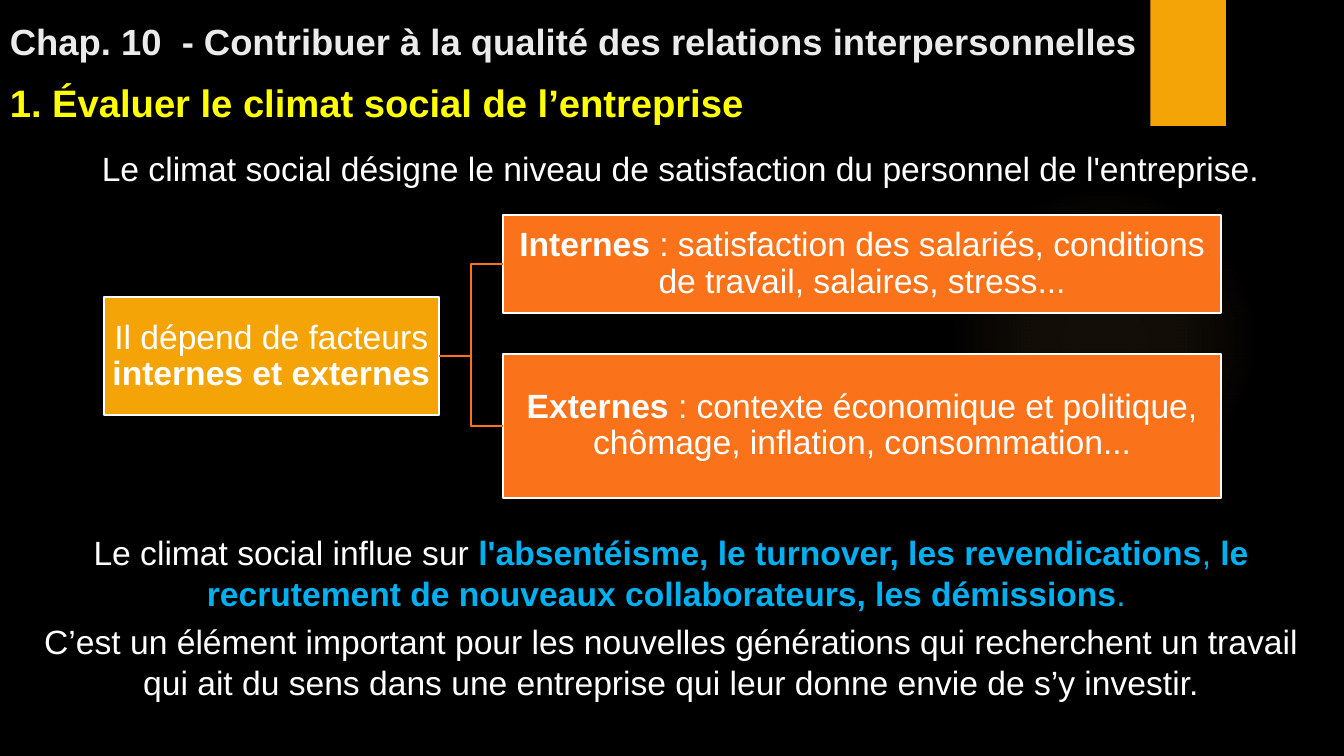
from lxml.etree import SubElement
from pptx import Presentation
from pptx.dml.color import RGBColor
from pptx.enum.shapes import MSO_CONNECTOR, MSO_SHAPE
from pptx.enum.text import MSO_ANCHOR, PP_ALIGN
from pptx.oxml import parse_xml
from pptx.oxml.ns import nsdecls, qn
from pptx.util import Inches, Pt

FONT = "Arial"
COLORS = {
    "black": "000000",
    "white": "FFFFFF",
    "title": "EBEBEB",
    "yellow": "FFFF00",
    "blue": "00B0F0",
    "amber": "F5A408",
    "orange": "FA731A",
    "glow": "FAC96A",
}


def rgb(name):
    return RGBColor.from_string(COLORS[name])


def write_text(s, paragraphs, size=24, color="white", bold=False, align=PP_ALIGN.CENTER,
               anchor=MSO_ANCHOR.TOP, inset=None, line_spacing=None, gap=0):
    """Each paragraph is a list of runs: (text, overrides of color and bold)."""
    tf = s.text_frame
    tf.word_wrap = True
    tf.vertical_anchor = anchor
    if inset is not None:
        tf.margin_left = tf.margin_right = tf.margin_top = tf.margin_bottom = Inches(inset)
    for i, runs in enumerate(paragraphs):
        p = tf.paragraphs[0] if i == 0 else tf.add_paragraph()
        p.alignment = align
        if line_spacing:
            p.line_spacing = line_spacing
        if i:
            p.space_before = Pt(gap)
        for text, style in runs:
            r = p.add_run()
            r.text = text
            r.font.name = FONT
            r.font.size = Pt(size)
            r.font.bold = style.get("bold", bold)
            r.font.color.rgb = rgb(style.get("color", color))


def add_text(slide, box, paragraphs, **style):
    s = slide.shapes.add_textbox(*map(Inches, box))
    write_text(s, paragraphs, **style)


def add_block(slide, box, fill, line=None, shape=MSO_SHAPE.RECTANGLE):
    s = slide.shapes.add_shape(shape, *map(Inches, box))
    s.shadow.inherit = False
    s.fill.solid()
    s.fill.fore_color.rgb = rgb(fill)
    if line:
        s.line.color.rgb = rgb(line)
        s.line.width = Pt(1.5)
    else:
        s.line.fill.background()
    return s


def add_factor(slide, box, fill, runs):
    s = add_block(slide, box, fill, line="white")
    write_text(s, [runs], anchor=MSO_ANCHOR.MIDDLE, inset=0.02, line_spacing=0.9)
    return s


def add_glow(slide, box):
    s = add_block(slide, box, "glow", shape=MSO_SHAPE.OVAL)
    stops = "".join(
        f'<a:gs pos="{pos * 1000}"><a:srgbClr val="{COLORS["glow"]}">'
        f'<a:alpha val="{alpha * 1000}"/></a:srgbClr></a:gs>'
        for pos, alpha in ((0, 7), (36, 6), (69, 0), (100, 0)))
    gradient = parse_xml(
        f'<a:gradFill {nsdecls("a")}><a:gsLst>{stops}</a:gsLst><a:path path="circle">'
        '<a:fillToRect l="50000" t="50000" r="50000" b="50000"/></a:path></a:gradFill>')
    solid = s.element.spPr.find(qn("a:solidFill"))
    s.element.spPr.replace(solid, gradient)


def join(slide, source, target):
    c = slide.shapes.add_connector(MSO_CONNECTOR.ELBOW, 0, 0, 0, 0)
    c.begin_connect(source, 3)
    c.end_connect(target, 1)
    c.line.color.rgb = rgb("orange")
    c.line.width = Pt(1.5)
    SubElement(c.element.spPr, qn("a:effectLst"))


def main():
    prs = Presentation()
    prs.slide_width, prs.slide_height = Inches(13.33), Inches(7.5)
    slide = prs.slides.add_slide(prs.slide_layouts[6])
    slide.background.fill.solid()
    slide.background.fill.fore_color.rgb = rgb("black")

    # Decoration
    add_glow(slide, (9.41, 1.83, 3.08, 3.08))
    add_block(slide, (11.41, 0, 0.75, 1.25), "amber")

    # Headings
    headings = (
        (0.08, 26, "title", "Chap. 10  - Contribuer à la qualité des relations interpersonnelles"),
        (0.7, 27.3, "yellow", "1. Évaluer le climat social de l’entreprise"),
    )
    for top, size, color, text in headings:
        add_text(slide, (0, top, 13.14, 0.59), [[(text, {})]], size=size, color=color,
                 bold=True, align=PP_ALIGN.LEFT, anchor=MSO_ANCHOR.BOTTOM)

    # Definition
    add_text(slide, (0.25, 1.42, 13.09, 0.5), [[(
        "Le climat social désigne le niveau de satisfaction du personnel de l'entreprise. ", {})]])

    # Factor tree
    strong = {"bold": True}
    root = add_factor(slide, (1.03, 2.95, 3.32, 1.17), "amber", [
        ("Il dépend de facteurs", {}), (" internes et externes", strong)])
    branches = (
        (2.13, 0.98, "Internes",
         "satisfaction des salariés, conditions de travail, salaires, stress..."),
        (3.51, 1.43, "Externes",
         "contexte économique et politique, chômage, inflation, consommation..."),
    )
    for top, height, name, examples in branches:
        branch = add_factor(slide, (4.99, top, 7.12, height), "orange", [
            (name, strong), (f" : {examples}", {})])
        join(slide, root, branch)

    # Consequences
    blue = {"color": "blue"}
    strong_blue = {"color": "blue", "bold": True}
    add_text(slide, (0.25, 5.23, 12.81, 1.8), [
        [("Le climat social influe sur ", {}),
         ("l'absentéisme, le turnover, les revendications", strong_blue),
         (", ", blue),
         ("le recrutement de nouveaux collaborateurs, les démissions", strong_blue),
         (". ", blue)],
        [("C’est un élément important pour les nouvelles générations qui recherchent un travail "
          "qui ait du sens dans une entreprise qui leur donne envie de s’y investir.", {})],
    ], gap=6)

    prs.save("out.pptx")


if __name__ == "__main__":
    main()
